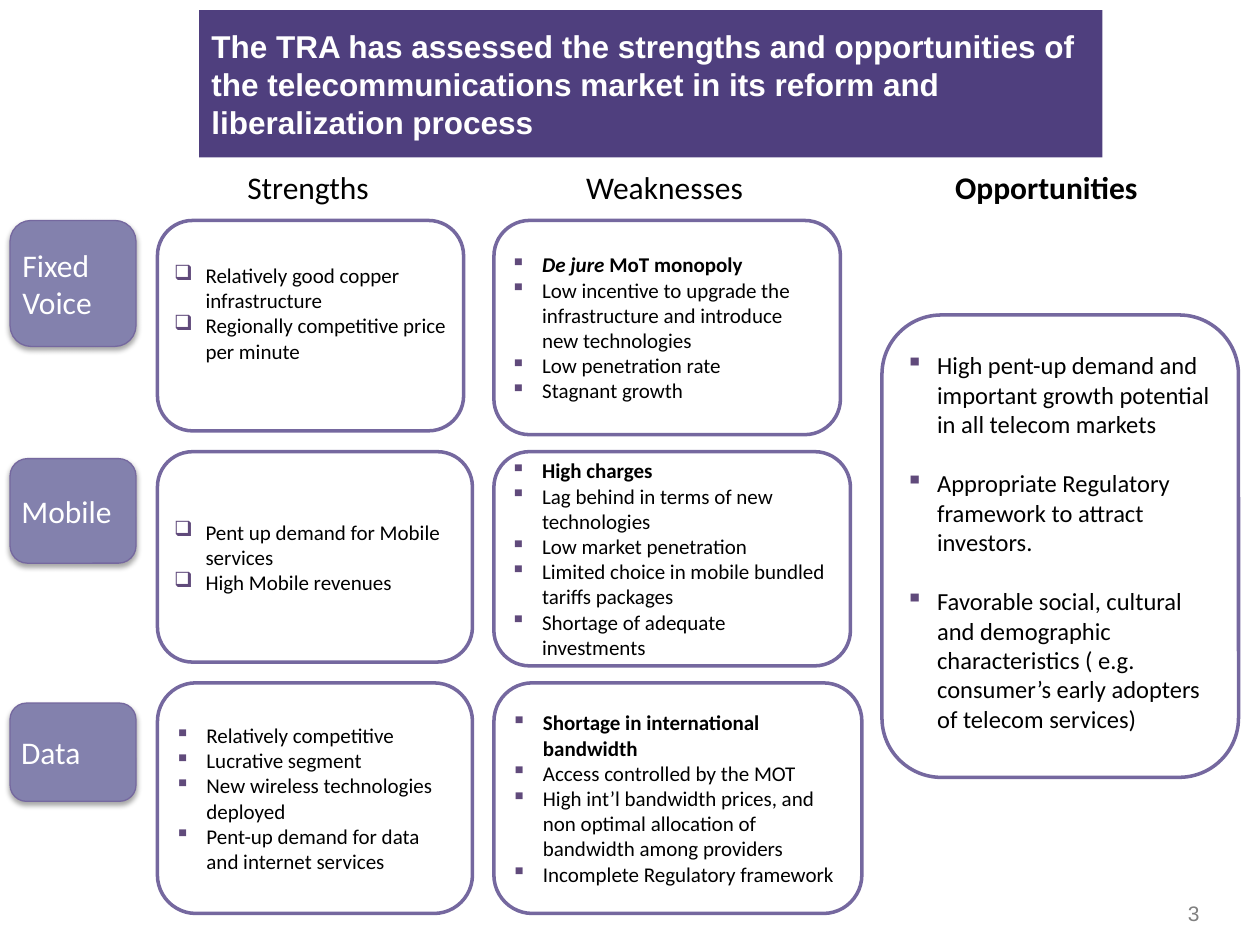
from lxml import etree
from pptx import Presentation
from pptx import util as u
from pptx.dml.color import RGBColor
from pptx.enum import shapes, text
from pptx.oxml import ns

COLORS = {
    "title": "4F3F7E",
    "outline": "75689F",
    "label": "8381AD",
    "bullet": "604A7B",
    "white": "FFFFFF",
    "black": "000000",
    "grey": "808080",
}
SQUARE, CHECKBOX = "▪", "❑"
ROW_TOP, ROW_PITCH = 1.75, 1.835
STRENGTHS_LEFT, WEAKNESSES_LEFT = 1.25, 3.92

HEADINGS = [("Strengths", 0.92, False), ("Weaknesses", 3.75, False), ("Opportunities", 6.78, True)]

# Label: text, top, height. Strengths: bullet, width, height, bottom inset, items.
# Weaknesses: width, height, items; an item is a list of (text, bold, italic) runs.
ROWS = [
    {
        "label": ("Fixed Voice", 1.75, 1),
        "strengths": (CHECKBOX, 2.43, 1.67, 0.25, [
            "Relatively good copper infrastructure",
            "Regionally competitive price per minute",
        ]),
        "weaknesses": (2.75, 1.7, [
            [("De jure ", True, True), ("MoT monopoly", True, False)],
            "Low incentive to upgrade the infrastructure and introduce new technologies",
            "Low penetration rate",
            "Stagnant growth",
        ]),
    },
    {
        "label": ("Mobile", 3.64, 0.83),
        "strengths": (CHECKBOX, 2.5, 1.67, 0.05, [
            "Pent up demand for Mobile services",
            "High Mobile revenues",
        ]),
        "weaknesses": (2.83, 1.7, [
            [("High charges", True, False)],
            "Lag behind in terms of new technologies",
            "Low market penetration",
            "Limited choice in mobile bundled tariffs packages",
            "Shortage of adequate investments",
        ]),
    },
    {
        "label": ("Data", 5.58, 0.78),
        "strengths": (SQUARE, 2.5, 1.83, 0.05, [
            "Relatively competitive",
            "Lucrative segment",
            "New wireless technologies deployed",
            "Pent-up demand for data and internet services",
        ]),
        "weaknesses": (2.92, 1.83, [
            [("Shortage in international bandwidth", True, False)],
            "Access controlled by the MOT",
            "High int’l bandwidth prices, and non optimal allocation of bandwidth among providers",
            "Incomplete Regulatory framework",
        ]),
    },
]

OPPORTUNITIES = [
    "High pent-up demand and important growth potential in all telecom markets",
    "Appropriate Regulatory framework to attract investors.",
    "Favorable social, cultural and demographic characteristics "
    "( e.g. consumer’s early adopters of telecom services)",
]


def rgb(name):
    return RGBColor.from_string(COLORS[name])


def set_all(target, values):
    for name, value in values.items():
        setattr(target, name, value)


def add_run(paragraph, content, size, color, bold=False, italic=False, font="Calibri"):
    run = paragraph.add_run()
    run.text = content
    set_all(run.font, {"name": font, "size": u.Pt(size), "bold": bold, "italic": italic})
    run.font.color.rgb = rgb(color)


def add_bullet(paragraph, character):
    """Give the paragraph a coloured bullet with a hanging indent."""
    properties = paragraph._p.get_or_add_pPr()
    properties.set("marL", str(u.Inches(0.25)))
    properties.set("indent", str(-u.Inches(0.25)))
    color = etree.SubElement(properties, ns.qn("a:buClr"))
    etree.SubElement(color, ns.qn("a:srgbClr"), val=COLORS["bullet"])
    etree.SubElement(properties, ns.qn("a:buChar"), char=character)


def add_panel(slide, kind, box, fill, line=None, line_width=0, inset=0.05):
    """Add a filled shape whose text is left-aligned and vertically centred."""
    shape = slide.shapes.add_shape(kind, *map(u.Inches, box))
    shape.shadow.inherit = False
    shape.fill.solid()
    shape.fill.fore_color.rgb = rgb(fill)
    if line:
        shape.line.color.rgb = rgb(line)
        shape.line.width = u.Pt(line_width)
    else:
        shape.line.fill.background()
    margins = {f"margin_{side}": u.Inches(inset) for side in ("left", "right", "top", "bottom")}
    set_all(shape.text_frame, {"word_wrap": True, "vertical_anchor": text.MSO_ANCHOR.MIDDLE, **margins})
    shape.text_frame.paragraphs[0].alignment = text.PP_ALIGN.LEFT
    return shape


def add_title(slide, content):
    shape = add_panel(slide, shapes.MSO_SHAPE.RECTANGLE, (1.58, 0.08, 7.17, 1.17), "title", inset=0.1)
    add_run(shape.text_frame.paragraphs[0], content, 18, "white", bold=True, font="Arial")


def add_plain_text(slide, box, content, alignment, size, color, bold=False, font="Calibri"):
    frame = slide.shapes.add_textbox(*map(u.Inches, box)).text_frame
    set_all(frame, {"word_wrap": False, "vertical_anchor": text.MSO_ANCHOR.MIDDLE})
    frame.paragraphs[0].alignment = alignment
    add_run(frame.paragraphs[0], content, size, color, bold=bold, font=font)


def add_row_label(slide, content, top, height):
    shape = add_panel(slide, shapes.MSO_SHAPE.ROUNDED_RECTANGLE, (0.08, top, 1, height),
                      "label", "outline", 0.75)
    add_run(shape.text_frame.paragraphs[0], content, 18, "white")
    effects = shape._element.spPr.find(ns.qn("a:effectLst"))
    shadow = etree.SubElement(effects, ns.qn("a:outerShdw"), blurRad=str(u.Pt(3.1)),
                              dist=str(u.Pt(1.8)), dir="5400000", rotWithShape="0")
    color = etree.SubElement(shadow, ns.qn("a:srgbClr"), val=COLORS["black"])
    etree.SubElement(color, ns.qn("a:alpha"), val="35000")


def add_bullet_card(slide, box, items, bullet=SQUARE, size=12, gap=0, bottom=0.05):
    shape = add_panel(slide, shapes.MSO_SHAPE.ROUNDED_RECTANGLE, box, "white", "outline", 2)
    frame = shape.text_frame
    frame.margin_bottom = u.Inches(bottom)
    for index, item in enumerate(items):
        paragraph = frame.add_paragraph() if index else frame.paragraphs[0]
        add_bullet(paragraph, bullet)
        paragraph.alignment = text.PP_ALIGN.LEFT
        if index and gap:
            paragraph.space_before = u.Pt(gap)
        runs = [(item, False, False)] if isinstance(item, str) else item
        for content, bold, italic in runs:
            add_run(paragraph, content, size, "black", bold, italic)


def main():
    presentation = Presentation()
    presentation.slide_width, presentation.slide_height = u.Inches(10), u.Inches(7.5)
    slide = presentation.slides.add_slide(presentation.slide_layouts[6])

    add_title(slide, "The TRA has assessed the strengths and opportunities of the "
                     "telecommunications market in its reform and liberalization process")
    for content, left, bold in HEADINGS:
        add_plain_text(slide, (left, 1.33, 3.05, 0.31), content,
                       text.PP_ALIGN.CENTER, 18, "black", bold)

    for index, row in enumerate(ROWS):
        top = ROW_TOP + index * ROW_PITCH
        add_row_label(slide, *row["label"])
        bullet, width, height, bottom, items = row["strengths"]
        add_bullet_card(slide, (STRENGTHS_LEFT, top, width, height), items, bullet, bottom=bottom)
        width, height, items = row["weaknesses"]
        add_bullet_card(slide, (WEAKNESSES_LEFT, top, width, height), items)

    add_bullet_card(slide, (7, 2.5, 2.83, 3.67), OPPORTUNITIES, size=14, gap=17, bottom=0.12)
    add_plain_text(slide, (9.33, 7.1, 0.41, 0.3), "3", text.PP_ALIGN.LEFT, 12, "grey", font="Arial")
    presentation.save("out.pptx")


if __name__ == "__main__":
    main()
